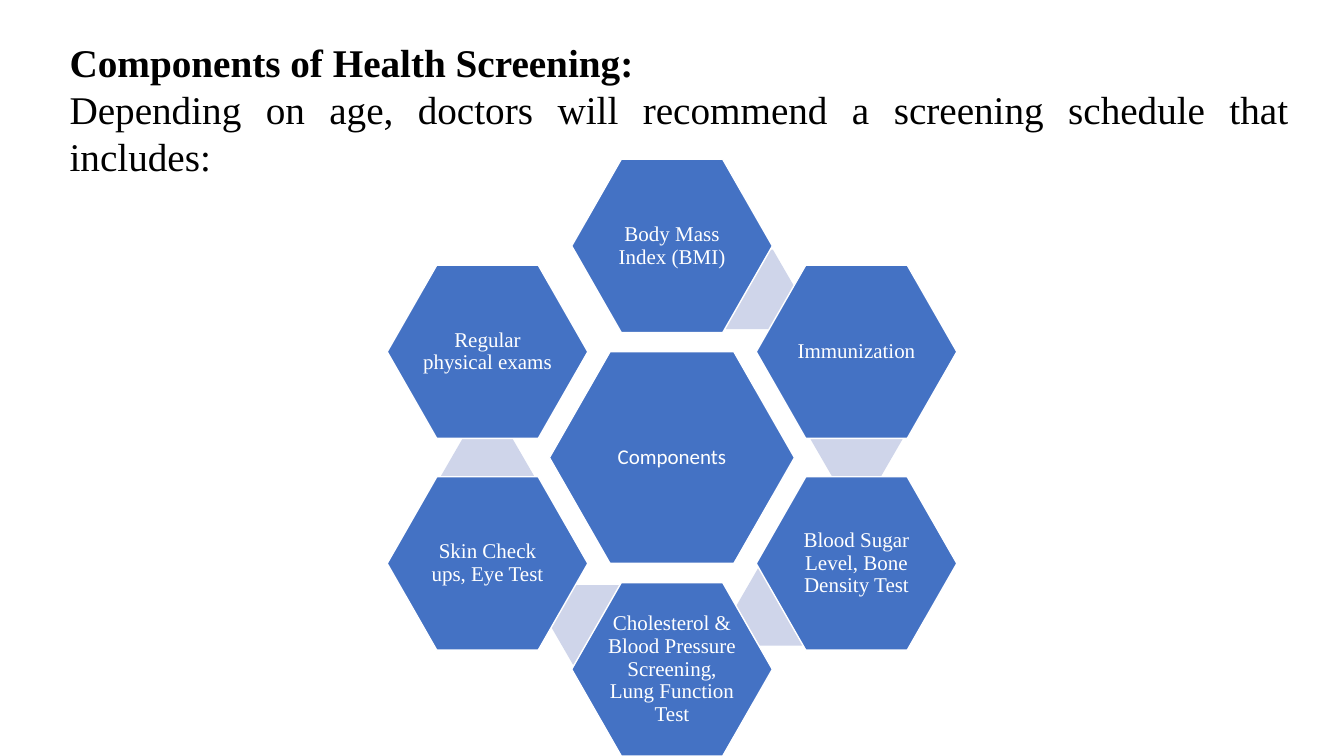
from dataclasses import dataclass
from typing import Optional

from pptx import Presentation, util as u
from pptx.dml import color
from pptx.enum import shapes, text

WIDTH, HEIGHT = 13.33, 7.5
SERIF, SANS = "Times New Roman", "Calibri"
BLUE, PALE, WHITE, BLACK = "4472C4", "CFD5EA", "FFFFFF", "000000"

# Honeycomb grid: offsets count columns and rows from the centre
CENTRE_X, CENTRE_Y = WIDTH / 2, 4.54
COLUMN, ROW = 1.83, 1.05


@dataclass(frozen=True)
class Size:
    width: float
    height: float
    point: float


@dataclass(frozen=True)
class Component:
    label: str
    column: float
    row: float
    link: Optional[tuple[float, float]] = None


CORE = Size(2.43, 2.1, 0.286)
CELL = Size(1.99, 1.72, 0.286)
LINK = Size(0.92, 0.79, 0.289)

COMPONENTS = [
    Component("Body Mass Index (BMI)", 0, -2, (0.42, -1.59)),
    Component("Immunization", 1, -1, (1, -0.18)),
    Component("Blood Sugar Level, Bone Density Test", 1, 1, (0.6, 1.4)),
    Component("Cholesterol & Blood Pressure Screening, Lung Function Test",
              0, 2, (-0.41, 1.58)),
    Component("Skin Check ups, Eye Test", -1, 1, (-1, 0.17)),
    Component("Regular physical exams", -1, -1),
]


def rgb(value: str) -> color.RGBColor:
    return color.RGBColor.from_string(value)


def add_run(paragraph, words: str, font: str, size: float, ink: str,
            bold: bool = False) -> None:
    run = paragraph.add_run()
    run.text = words
    run.font.name = font
    run.font.size = u.Pt(size)
    run.font.bold = bold
    run.font.color.rgb = rgb(ink)


def add_hexagon(slide, size: Size, column: float, row: float, fill: str):
    shape = slide.shapes.add_shape(
        shapes.MSO_SHAPE.HEXAGON,
        u.Inches(CENTRE_X + column * COLUMN - size.width / 2),
        u.Inches(CENTRE_Y + row * ROW - size.height / 2),
        u.Inches(size.width), u.Inches(size.height))
    shape.adjustments[0] = size.point
    shape.shadow.inherit = False
    shape.fill.solid()
    shape.fill.fore_color.rgb = rgb(fill)
    shape.line.fill.background()
    return shape


def add_cell(slide, size: Size, column: float, row: float, label: str,
             font: str) -> None:
    shape = add_hexagon(slide, size, column, row, BLUE)
    shape.line.color.rgb = rgb(WHITE)
    shape.line.width = u.Pt(1)
    frame = shape.text_frame
    frame.word_wrap = True
    frame.vertical_anchor = text.MSO_ANCHOR.MIDDLE
    frame.margin_left = frame.margin_right = u.Inches(0.02)
    frame.margin_top = frame.margin_bottom = u.Inches(0.02)
    paragraph = frame.paragraphs[0]
    paragraph.alignment = text.PP_ALIGN.CENTER
    paragraph.line_spacing = 0.9
    add_run(paragraph, label, font, 15, WHITE)


def add_title(slide) -> None:
    title = slide.shapes.title
    title.left, title.top = u.Inches(0.59), u.Inches(0.33)
    title.width, title.height = u.Inches(12.29), u.Inches(1.51)
    frame = title.text_frame
    frame.word_wrap = True
    frame.auto_size = text.MSO_AUTO_SIZE.NONE
    frame.vertical_anchor = text.MSO_ANCHOR.TOP
    heading, intro = frame.paragraphs[0], frame.add_paragraph()
    for paragraph in (heading, intro):
        paragraph.alignment = text.PP_ALIGN.JUSTIFY
        paragraph.line_spacing = 1.0
        paragraph.space_before = u.Pt(0)
    add_run(heading, "Components of Health Screening:", SERIF, 28, BLACK, True)
    add_run(intro, "Depending on age, doctors will recommend a screening "
            "schedule that includes:", SERIF, 28, BLACK)


def main() -> None:
    presentation = Presentation()
    presentation.slide_width = u.Inches(WIDTH)
    presentation.slide_height = u.Inches(HEIGHT)
    slide = presentation.slides.add_slide(presentation.slide_layouts[5])

    add_title(slide)

    # Central hexagon, then the ring with the pale links beneath it
    add_cell(slide, CORE, 0, 0, "Components", SANS)
    for component in COMPONENTS:
        if component.link:
            add_hexagon(slide, LINK, *component.link, PALE)
        add_cell(slide, CELL, component.column, component.row,
                 component.label, SERIF)

    presentation.save("out.pptx")


if __name__ == "__main__":
    main()
